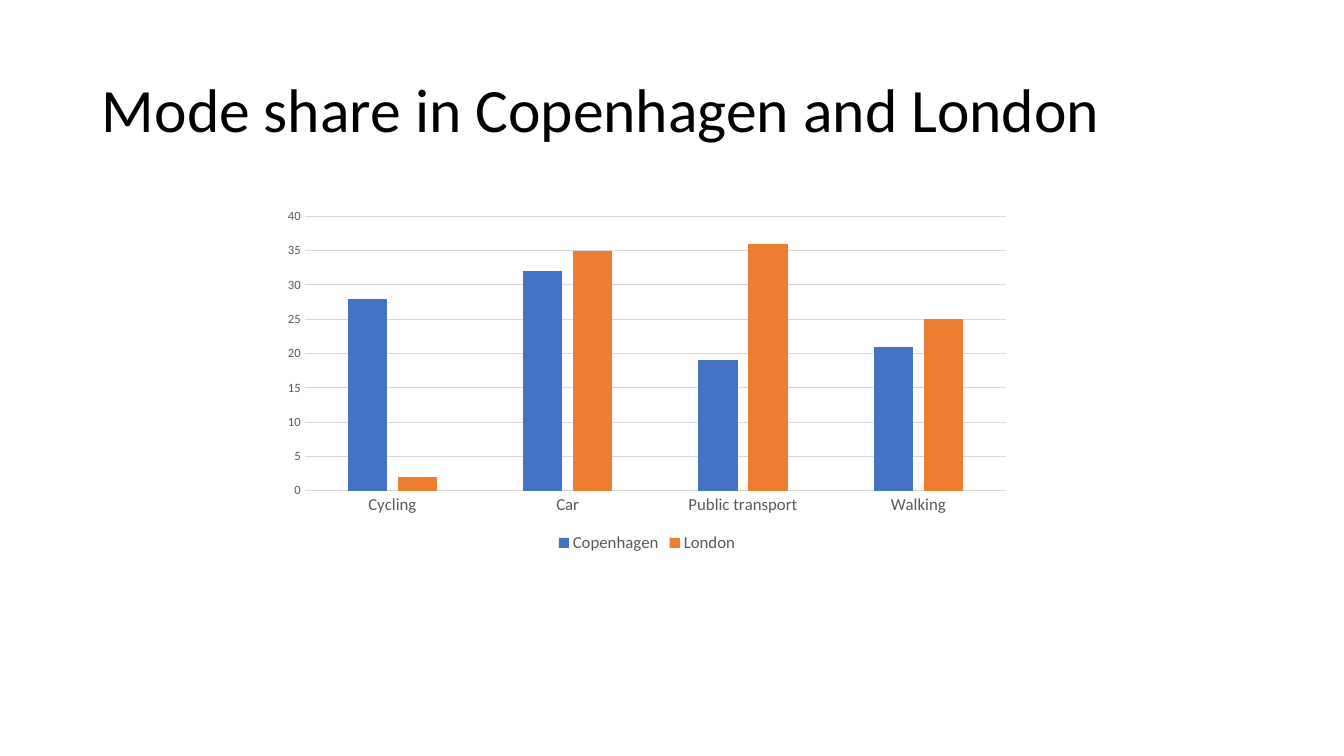
"""Build a slide comparing mode share in Copenhagen and London."""
import pptx
import pptx.chart.data
import pptx.dml.color
import pptx.enum.chart
import pptx.enum.text
import pptx.util

PX = 914400 / 100.8
FONT = "Calibri"
COLORS = {
    "title": "000000",
    "label": "595959",
    "grid": "D9D9D9",
    "Copenhagen": "4472C4",
    "London": "ED7D31",
}
MODES = ["Cycling", "Car", "Public transport", "Walking"]
SHARES = {"Copenhagen": [28, 32, 19, 21], "London": [2, 35, 36, 25]}


def box(*lengths):
    return [pptx.util.Emu(round(n * PX)) for n in lengths]


def style(font, size, color):
    font.name = FONT
    font.size = pptx.util.Pt(size)
    font.color.rgb = pptx.dml.color.RGBColor.from_string(COLORS[color])


prs = pptx.Presentation()
prs.slide_width, prs.slide_height = box(1344, 756)
s = prs.slides.add_slide(prs.slide_layouts[6])

tf = s.shapes.add_textbox(*box(92, 40, 1159, 146)).text_frame
tf.word_wrap = True
tf.vertical_anchor = pptx.enum.text.MSO_ANCHOR.MIDDLE
p = tf.paragraphs[0]
p.text = "Mode share in Copenhagen and London"
p.line_spacing = 0.9
style(p.font, 44, "title")

data = pptx.chart.data.CategoryChartData()
data.categories = MODES
for city, values in SHARES.items():
    data.add_series(city, values)
chart = s.shapes.add_chart(
    pptx.enum.chart.XL_CHART_TYPE.COLUMN_CLUSTERED, *box(273, 202, 748, 355), data
).chart
style(chart.font, 10, "title")
chart.has_title = False

chart.has_legend = True
chart.legend.position = pptx.enum.chart.XL_LEGEND_POSITION.BOTTOM
chart.legend.include_in_layout = False
style(chart.legend.font, 12, "label")

plot = chart.plots[0]
plot.gap_width = 219
plot.overlap = -27
plot.vary_by_categories = False
for series in plot.series:
    series.format.fill.solid()
    series.format.fill.fore_color.rgb = pptx.dml.color.RGBColor.from_string(COLORS[series.name])

for axis, size in ((chart.category_axis, 12), (chart.value_axis, 9)):
    axis.major_tick_mark = pptx.enum.chart.XL_TICK_MARK.NONE
    axis.minor_tick_mark = pptx.enum.chart.XL_TICK_MARK.NONE
    style(axis.tick_labels.font, size, "label")

chart.value_axis.minimum_scale = 0
chart.value_axis.maximum_scale = 40
chart.value_axis.major_unit = 5
chart.value_axis.format.line.fill.background()
for line in (chart.category_axis.format.line, chart.value_axis.major_gridlines.format.line):
    line.color.rgb = pptx.dml.color.RGBColor.from_string(COLORS["grid"])
    line.width = pptx.util.Pt(0.75)

prs.save("out.pptx")
